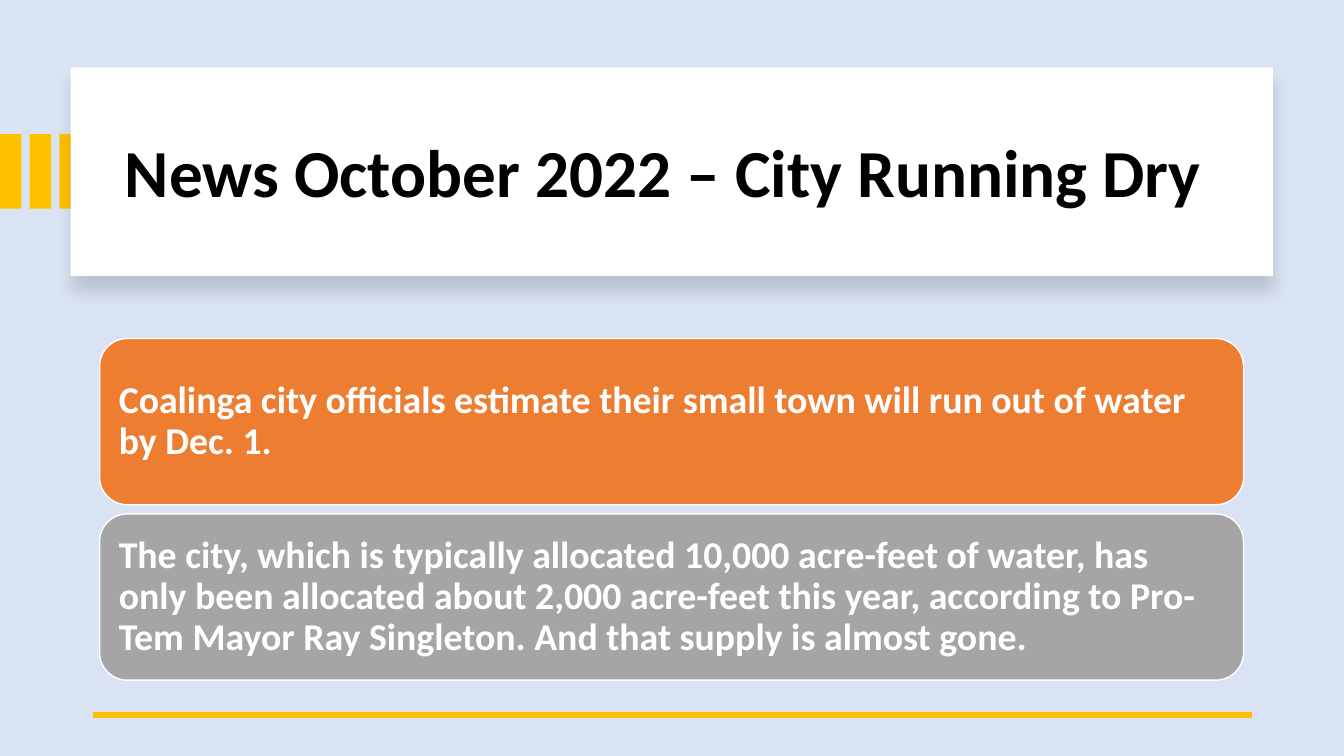
from dataclasses import dataclass

from lxml import etree
from pptx import Presentation
from pptx.dml.color import RGBColor
from pptx.enum.shapes import MSO_CONNECTOR, MSO_SHAPE
from pptx.enum.text import MSO_ANCHOR, MSO_AUTO_SIZE, PP_ALIGN
from pptx.oxml import parse_xml
from pptx.oxml.ns import nsdecls, qn
from pptx.shapes.autoshape import Shape
from pptx.slide import Slide
from pptx.text.text import TextFrame
from pptx.util import Cm, Pt

RECTANGLE = MSO_SHAPE.RECTANGLE
ROUNDED = MSO_SHAPE.ROUNDED_RECTANGLE
STRAIGHT = MSO_CONNECTOR.STRAIGHT
MIDDLE = MSO_ANCHOR.MIDDLE
LEFT = PP_ALIGN.LEFT
NO_AUTOFIT = MSO_AUTO_SIZE.NONE

FONT = "Calibri"
TITLE_ONLY_LAYOUT = 5
COLORS = {
    "background": "DAE3F3",
    "gold": "FFC000",
    "white": "FFFFFF",
    "black": "000000",
    "orange": "ED7D31",
    "gray": "A5A5A5",
}


@dataclass(frozen=True)
class Box:
    """Position and size in centimetres."""
    left: float
    top: float
    width: float
    height: float


@dataclass(frozen=True)
class Card:
    color: str
    text: str


STRIPE_COUNT = 3
STRIPE_STEP = 0.75
CARD_STEP = 4.42
PANEL = Box(1.78, 1.7, 30.3, 5.26)
TITLE = Box(2.9, 2.26, 28.27, 4.32)
CARDS = [
    Card("orange", "Coalinga city officials estimate their small town will run "
                   "out of water by Dec. 1."),
    Card("gray", "The city, which is typically allocated 10,000 acre-feet of water, "
                 "has only been allocated about 2,000 acre-feet this year, according "
                 "to Pro-Tem Mayor Ray Singleton. And that supply is almost gone."),
]


def rgb(name: str) -> RGBColor:
    return RGBColor.from_string(COLORS[name])


def write_text(frame: TextFrame, text: str, *, size: float, color: str,
               side_inset: float, end_inset: float) -> None:
    frame.word_wrap = True
    frame.auto_size = NO_AUTOFIT
    frame.vertical_anchor = MIDDLE
    frame.margin_left = frame.margin_right = Cm(side_inset)
    frame.margin_top = frame.margin_bottom = Cm(end_inset)
    paragraph = frame.paragraphs[0]
    paragraph.alignment = LEFT
    paragraph.line_spacing = 0.9
    run = paragraph.add_run()
    run.text = text
    run.font.name = FONT
    run.font.size = Pt(size)
    run.font.bold = True
    run.font.color.rgb = rgb(color)


def add_block(slide: Slide, kind: MSO_SHAPE, box: Box, fill: str,
              outline: str | None = None) -> Shape:
    shape = slide.shapes.add_shape(
        kind, Cm(box.left), Cm(box.top), Cm(box.width), Cm(box.height))
    shape.shadow.inherit = False
    shape.fill.solid()
    shape.fill.fore_color.rgb = rgb(fill)
    if outline:
        shape.line.color.rgb = rgb(outline)
        shape.line.width = Pt(1)
    else:
        shape.line.fill.background()
    return shape


def add_drop_shadow(shape: Shape) -> None:
    effects = shape._element.spPr.find(qn("a:effectLst"))
    effects.append(parse_xml(
        f'<a:outerShdw {nsdecls("a")} blurRad="{Pt(11)}" dist="{Pt(10)}" '
        f'dir="5400000" algn="t" rotWithShape="0">'
        f'<a:srgbClr val="{COLORS["black"]}"><a:alpha val="15000"/></a:srgbClr>'
        f'</a:outerShdw>'))


def add_header(slide: Slide) -> None:
    for index in range(STRIPE_COUNT):
        add_block(slide, RECTANGLE, Box(index * STRIPE_STEP, 3.38, 0.54, 1.88), "gold")
    panel = add_block(slide, RECTANGLE, PANEL, "white")
    add_drop_shadow(panel)

    title = slide.shapes.title
    title.left, title.top = Cm(TITLE.left), Cm(TITLE.top)
    title.width, title.height = Cm(TITLE.width), Cm(TITLE.height)
    write_text(title.text_frame, "News October 2022 – City Running Dry",
               size=48, color="black", side_inset=0.25, end_inset=0.13)
    panel._element.addnext(title._element)  # bring the title in front of its panel


def add_bottom_line(slide: Slide) -> None:
    line = slide.shapes.add_connector(
        STRAIGHT, Cm(31.55), Cm(18.01), Cm(2.34), Cm(18.01))
    line.line.color.rgb = rgb("gold")
    line.line.width = Pt(4.5)
    etree.SubElement(line._element.spPr, qn("a:effectLst"))


def add_cards(slide: Slide) -> None:
    for index, card in enumerate(CARDS):
        box = Box(2.51, 8.53 + index * CARD_STEP, 28.83, 4.19)
        shape = add_block(slide, ROUNDED, box, card.color, outline="white")
        write_text(shape.text_frame, card.text, size=27, color="white",
                   side_inset=0.28, end_inset=0.28)


def main() -> None:
    presentation = Presentation()
    presentation.slide_width = Cm(33.87)
    presentation.slide_height = Cm(19.05)
    slide = presentation.slides.add_slide(presentation.slide_layouts[TITLE_ONLY_LAYOUT])
    slide.background.fill.solid()
    slide.background.fill.fore_color.rgb = rgb("background")
    add_header(slide)
    add_bottom_line(slide)
    add_cards(slide)
    presentation.save("out.pptx")


if __name__ == "__main__":
    main()
